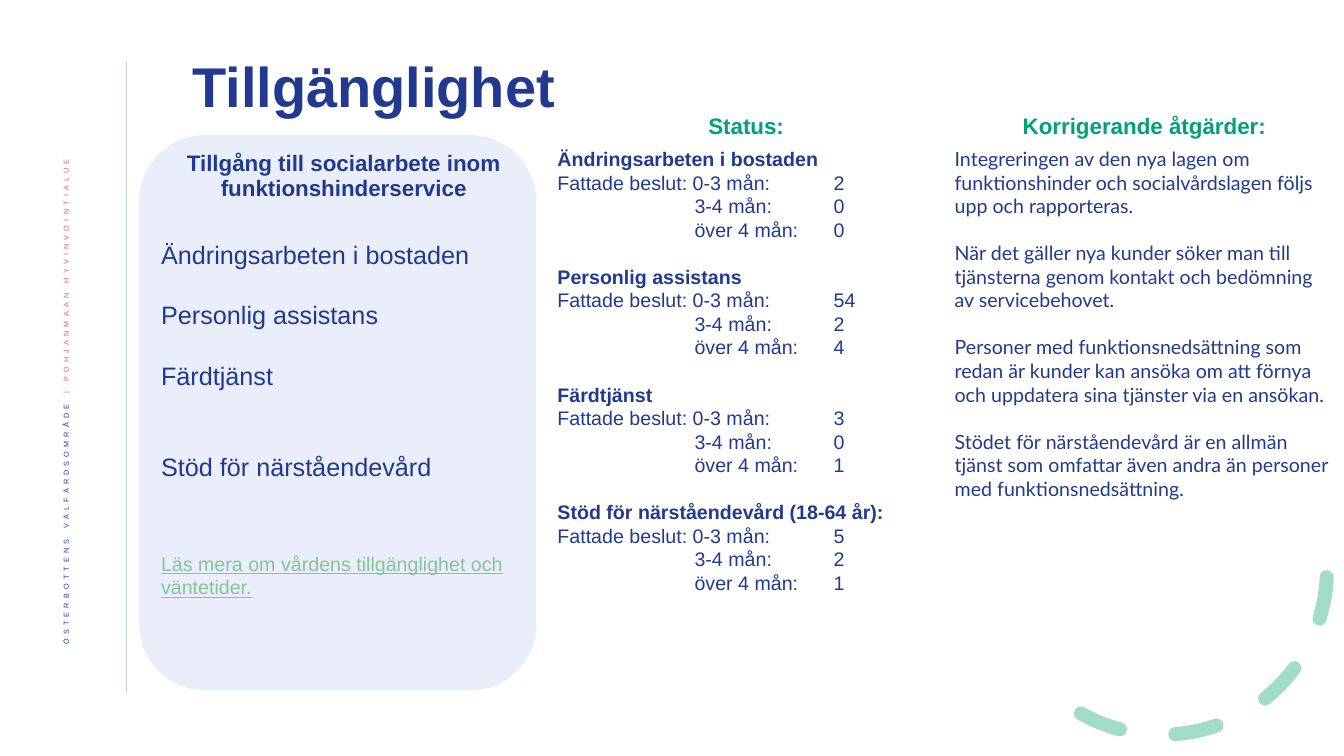
"""Build the accessibility slide on services for disabled people."""
from lxml.etree import SubElement
from pptx import Presentation
from pptx.dml.color import RGBColor
from pptx.enum.dml import MSO_LINE_DASH_STYLE as Dash
from pptx.enum.shapes import MSO_CONNECTOR as Connector, MSO_SHAPE as Shape
from pptx.enum.text import MSO_ANCHOR as Anchor, PP_ALIGN as Align
from pptx.oxml.ns import qn
from pptx.util import Inches, Pt

COLORS = {
    "navy": "213A8F",
    "green": "00A174",
    "link": "85C598",
    "coral": "EB5C5F",
    "lavender": "C9D2F2",
}
SLIDE_WIDTH, SLIDE_HEIGHT = Inches(13.33), Inches(7.5)
LINE_FACTOR = 1.2
HEADING_GAP = 6
STATUS_TABS = (1.36, 2.74)

SERVICES = [
    ("Ändringsarbeten i bostaden", 27.6),
    ("Personlig assistans", 21.6),
    ("Färdtjänst", 21.6),
    ("Stöd för närståendevård", 43.2),
]
INTERVALS = ("Fattade beslut: 0-3 mån:", "\t3-4 mån:", "\töver 4 mån:")
STATUS = {
    "Ändringsarbeten i bostaden": (2, 0, 0),
    "Personlig assistans": (54, 2, 4),
    "Färdtjänst": (3, 0, 1),
    "Stöd för närståendevård (18-64 år):": (5, 2, 1),
}
ACTIONS = [
    "Integreringen av den nya lagen om funktionshinder och socialvårdslagen "
    "följs upp och rapporteras.",
    "När det gäller nya kunder söker man till tjänsterna genom kontakt och "
    "bedömning av servicebehovet.",
    "Personer med funktionsnedsättning som redan är kunder kan ansöka om att "
    "förnya och uppdatera sina tjänster via en ansökan.",
    "Stödet för närståendevård är en allmän tjänst som omfattar även andra än "
    "personer med funktionsnedsättning.",
]


def color(name):
    """Return the named colour."""
    return RGBColor.from_string(COLORS[name])


def place(left, top, width, height):
    """Turn percentages of the slide into lengths."""
    return (
        int(SLIDE_WIDTH * left / 100),
        int(SLIDE_HEIGHT * top / 100),
        int(SLIDE_WIDTH * width / 100),
        int(SLIDE_HEIGHT * height / 100),
    )


def set_alpha(fill, percent):
    """Make a solid colour partly transparent."""
    value = next(fill.iter(qn("a:srgbClr")))
    SubElement(value, qn("a:alpha"), val=str(percent * 1000))


def add_frame(page, area, anchor=Anchor.TOP):
    """Add a wrapping text box and return its text frame."""
    frame = page.shapes.add_textbox(*place(*area)).text_frame
    frame.word_wrap = True
    frame.vertical_anchor = anchor
    return frame


def add_span(para, text, size=14, tint="navy", bold=False, underline=False,
             font="Arial"):
    """Add a formatted run to a paragraph."""
    span = para.add_run()
    span.text = text
    span.font.name = font
    span.font.size = Pt(size)
    span.font.bold = bold
    span.font.underline = underline
    span.font.color.rgb = color(tint)
    return span


def write(frame, text, size=14, align=Align.LEFT, before=0, leading=1,
          tabs=(), **style):
    """Write one paragraph with the given format."""
    first = frame.paragraphs[0]
    para = frame.add_paragraph() if first.runs else first
    para.alignment = align
    para.line_spacing = Pt(size * LINE_FACTOR * leading)
    if before:
        para.space_before = Pt(before)
    if tabs:
        stops = SubElement(para._p.get_or_add_pPr(), qn("a:tabLst"))
        for stop in tabs:
            SubElement(stops, qn("a:tab"), pos=str(Inches(stop)), algn="l")
    add_span(para, text, size=size, **style)


def add_side_label(page):
    """Add the rule and the upright organisation name at the left."""
    left, top, _, height = place(9.38, 8.13, 0, 83.6)
    rule = page.shapes.add_connector(
        Connector.STRAIGHT, left, top, left, top + height)
    rule.line.color.rgb = color("lavender")
    rule.line.width = Pt(0.5)
    SubElement(rule.element.spPr, qn("a:effectLst"))

    frame = add_frame(page, (3.15, 18.93, 3.9, 76.4), Anchor.MIDDLE)
    frame._txBody.bodyPr.set("vert", "vert270")
    para = frame.paragraphs[0]
    para.alignment = Align.RIGHT
    para.line_spacing = 0.9
    for text, tint in (("ÖSTERBOTTENS VÄLFÄRDSOMRÅDE ", "navy"),
                       ("| POHJANMAAN HYVINVOINTIALUE ", "coral")):
        props = add_span(para, text, size=9, tint=tint).font._element
        props.set("baseline", "30000")
        props.set("spc", "300")


def add_dashed_arc(page):
    """Add the dashed arc in the lower right corner."""
    arc = page.shapes.add_shape(Shape.ARC, *place(74.19, 53.6, 24.53, 43.6))
    arc.shadow.inherit = False
    arc.adjustments[0], arc.adjustments[1] = 158.17, 17.81
    arc.rotation = 98.9
    arc.fill.background()
    arc.line.color.rgb = color("green")
    arc.line.width = Pt(10)
    arc.line.dash_style = Dash.DASH
    outline = arc.element.spPr.find(qn("a:ln"))
    outline.set("cap", "rnd")
    set_alpha(outline, 36)


def add_services(page):
    """Add the rounded panel with the list of services."""
    panel = page.shapes.add_shape(
        Shape.ROUNDED_RECTANGLE, *place(10.35, 17.87, 29.56, 73.47))
    panel.shadow.inherit = False
    panel.fill.solid()
    panel.fill.fore_color.rgb = color("lavender")
    panel.line.fill.background()
    set_alpha(panel.element.spPr, 38)

    frame = add_frame(page, (11.25, 19.47, 28.66, 60.93))
    write(frame, "Tillgång till socialarbete inom funktionshinderservice",
          size=16, align=Align.CENTER, leading=0.9, bold=True)
    for service, gap in SERVICES:
        write(frame, service, size=18, before=gap)
    write(frame, "Läs mera om vårdens tillgänglighet och väntetider.",
          before=50.4, tint="link", underline=True)


def add_column(page, area, heading):
    """Add a text column with a green heading and return its frame."""
    frame = add_frame(page, area)
    write(frame, heading, size=16, align=Align.CENTER, tint="green", bold=True)
    return frame


def add_status(page):
    """Add the decision counts for each service."""
    frame = add_column(page, (40.74, 14.13, 29.56, 69.33), "Status:")
    gap = HEADING_GAP
    for service, counts in STATUS.items():
        write(frame, service, before=gap, bold=True)
        for interval, count in zip(INTERVALS, counts):
            write(frame, f"{interval}\t{count}", tabs=STATUS_TABS)
        gap = 16.8


def add_actions(page):
    """Add the corrective actions."""
    frame = add_column(
        page, (70.29, 14.13, 29.71, 56.27), "Korrigerande åtgärder:")
    gap = HEADING_GAP
    for action in ACTIONS:
        write(frame, action, before=gap, font="Lato")
        gap = 16.8


def main():
    """Build and save the deck."""
    deck = Presentation()
    deck.slide_width, deck.slide_height = SLIDE_WIDTH, SLIDE_HEIGHT
    page = deck.slides.add_slide(deck.slide_layouts[6])
    add_side_label(page)
    add_dashed_arc(page)
    title = add_frame(page, (13.58, 6, 76.52, 11.33), Anchor.MIDDLE)
    write(title, "Tillgänglighet", size=40, leading=0.9, bold=True)
    add_services(page)
    add_status(page)
    add_actions(page)
    deck.save("out.pptx")


if __name__ == "__main__":
    main()
